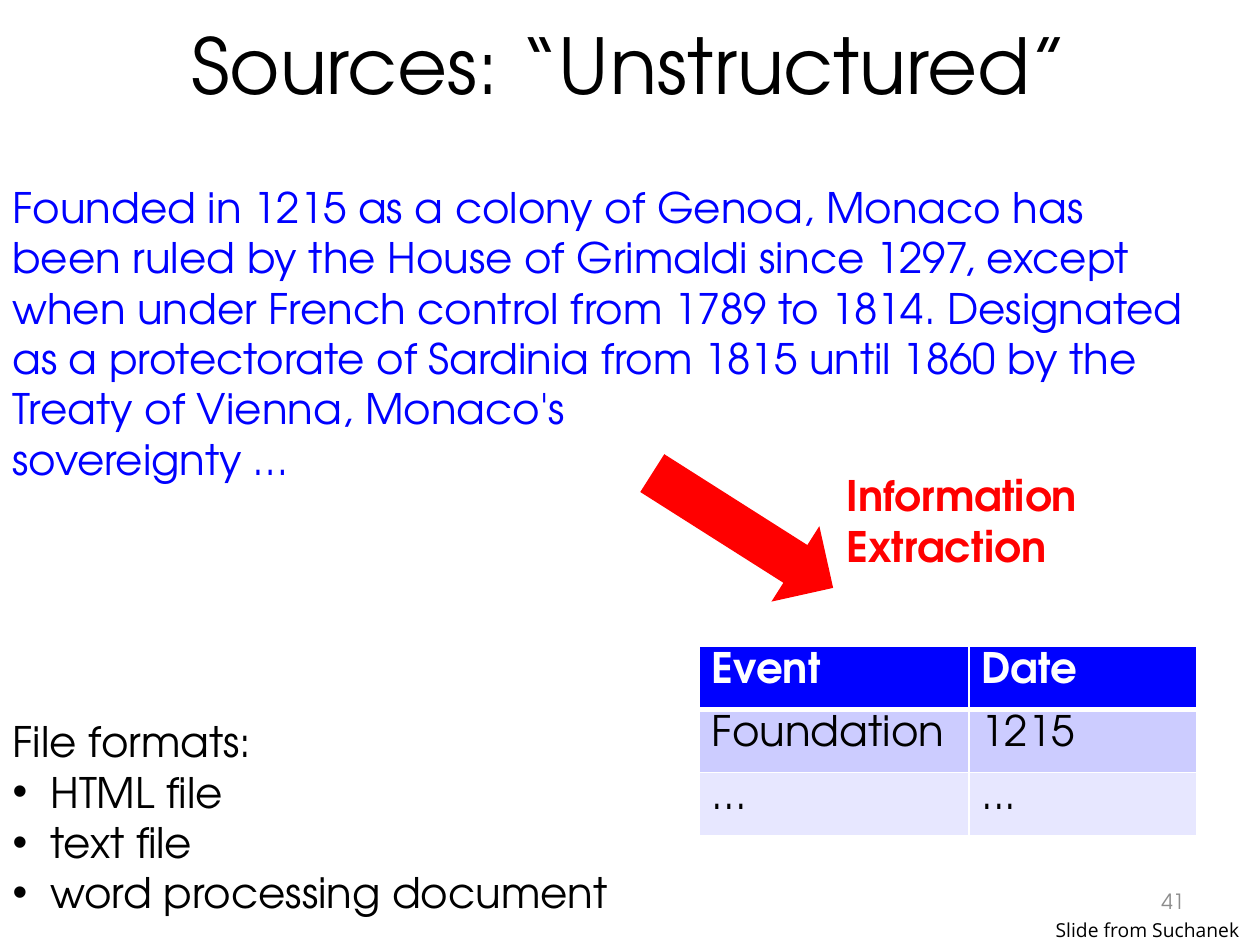
from dataclasses import dataclass

from lxml.etree import SubElement
from pptx import Presentation
from pptx.dml.color import RGBColor
from pptx.enum.shapes import MSO_SHAPE as Shape
from pptx.enum.text import MSO_ANCHOR as Anchor, MSO_AUTO_SIZE as AutoSize, PP_ALIGN as Align
from pptx.oxml.ns import qn
from pptx.util import Inches, Pt


@dataclass(frozen=True)
class Theme:
    """Colours, fonts and type sizes of the deck."""
    font: str = "TeX Gyre Adventor"
    credit_font: str = "Open Sans"
    title: int = 44
    body: int = 24
    number: int = 12
    credit: int = 11
    black: str = "000000"
    white: str = "FFFFFF"
    blue: str = "0001FF"
    red: str = "FF0000"
    grey: str = "8C8C8C"
    bands: tuple = ("CCCCFF", "E7E7FF")


THEME = Theme()
COLUMNS, ROWS = 100, 75
UNIT = Inches(10) / COLUMNS


def grid(*cells):
    """Turn grid columns and rows into slide lengths."""
    return [round(cell * UNIT) for cell in cells]


def move(shape, box):
    """Place a shape in a grid box."""
    shape.left, shape.top, shape.width, shape.height = grid(*box)


def write(frame, *lines, size=THEME.body, color=THEME.black, font=THEME.font,
          bold=False, align=Align.LEFT, spacing=None):
    """Write each line as one formatted paragraph and return the paragraphs."""
    for index, line in enumerate(lines):
        para = frame.add_paragraph() if index else frame.paragraphs[0]
        para.alignment, para.line_spacing = align, spacing
        para.space_before = Pt(0)
        span = para.add_run()
        span.text = line
        span.font.name, span.font.size, span.font.bold = font, Pt(size), bold
        span.font.color.rgb = RGBColor.from_string(color)
    return frame.paragraphs


def add_text(page, box, *lines, wrap=True, anchor=Anchor.TOP, **style):
    """Add a text box with the given lines."""
    frame = page.shapes.add_textbox(*grid(*box)).text_frame
    frame.word_wrap, frame.vertical_anchor = wrap, anchor
    write(frame, *lines, **style)


def add_title(page, box, text):
    """Fill the title placeholder."""
    title = page.shapes.title
    move(title, box)
    title.text_frame.vertical_anchor = Anchor.MIDDLE
    write(title.text_frame, text, size=THEME.title, align=Align.CENTER)


def add_list(page, box, heading, items):
    """Fill the body placeholder with a heading and its bulleted items."""
    body = page.placeholders[1]
    move(body, box)
    frame = body.text_frame
    frame.auto_size, frame.word_wrap = AutoSize.NONE, False
    for index, para in enumerate(write(frame, heading, *items)):
        props = para._p.get_or_add_pPr()
        indent = Inches(0.3) if index else 0
        props.set("marL", str(indent))
        props.set("indent", str(-indent))
        if index:
            SubElement(props, qn("a:buFont")).set("typeface", "Arial")
            SubElement(props, qn("a:buChar")).set("char", "•")
        else:
            SubElement(props, qn("a:buNone"))


def add_extraction(page, box):
    """Draw the slanted arrow and its label beside it."""
    left, top, _, height = box
    arrow = page.shapes.add_shape(Shape.DOWN_ARROW, *grid(left, top, 7.1, height))
    arrow.rotation = 302.4
    arrow.shadow.inherit = False
    arrow.fill.solid()
    arrow.fill.fore_color.rgb = RGBColor.from_string(THEME.red)
    arrow.line.fill.background()
    add_text(page, (left + 10.8, top + 3.2, 20.5, 9.1), "Information", "Extraction",
             wrap=False, color=THEME.red, bold=True)


def style_cell(cell, text, fill, bottom, **style):
    """Fill a table cell, write its text and rule its sides."""
    cell.margin_top = Inches(0.07)
    write(cell.text_frame, text, spacing=0.9, **style)
    props = cell._tc.get_or_add_tcPr()
    for side, width in (("L", 1), ("R", 1), ("T", 1), ("B", bottom)):
        line = SubElement(props, qn(f"a:ln{side}"), w=str(Pt(width)))
        paint = SubElement(line, qn("a:solidFill"))
        SubElement(paint, qn("a:srgbClr"), val=THEME.white)
    cell.fill.solid()
    cell.fill.fore_color.rgb = RGBColor.from_string(fill)


def add_facts(page, box, widths, rows):
    """Add the table of extracted facts with a header row."""
    table = page.shapes.add_table(len(rows), len(widths), *grid(*box)).table
    for column, width in zip(table.columns, grid(*widths)):
        column.width = width
    for r, row in enumerate(rows):
        for c, text in enumerate(row):
            if r == 0:
                style_cell(table.cell(r, c), text, THEME.blue, 3, color=THEME.white, bold=True)
            else:
                style_cell(table.cell(r, c), text, THEME.bands[(r - 1) % 2], 1)


def add_footer(page, box, number, credit):
    """Add the slide number above the credit line."""
    left, top, width, _ = box
    add_text(page, (left, top, width - 5, 4), number, size=THEME.number,
             color=THEME.grey, align=Align.RIGHT, anchor=Anchor.MIDDLE)
    add_text(page, (left + 11.1, top + 2.9, 17.2, 2.9), credit, wrap=False,
             size=THEME.credit, font=THEME.credit_font)


def main():
    """Build the slide and save the deck."""
    deck = Presentation()
    deck.slide_width, deck.slide_height = grid(COLUMNS, ROWS)
    page = deck.slides.add_slide(deck.slide_layouts[1])
    add_text(page, (0, 13.9, 95, 25.2),
             "Founded in 1215 as a colony of Genoa, Monaco has been ruled by the House of "
             "Grimaldi since 1297, except when under French control from 1789 to 1814. "
             "Designated as a protectorate of Sardinia from 1815 until 1860 by the Treaty "
             "of Vienna, Monaco's", "sovereignty …", color=THEME.blue)
    add_title(page, (5, 0, 90, 10.1), "Sources: “Unstructured”")
    add_list(page, (0, 56.3, 50, 17.2), "File formats:",
             ["HTML file", "text file", "word processing document"])
    add_facts(page, (55.5, 51.3, 39.5, 15), (21.4, 18.1),
              [("Event", "Date"), ("Foundation", "1215"), ("...", "...")])
    add_extraction(page, (55.4, 33.6, 31.3, 17))
    add_footer(page, (71.7, 69.5, 28.3, 5.5), "41", "Slide from Suchanek")
    deck.save("out.pptx")


if __name__ == "__main__":
    main()
